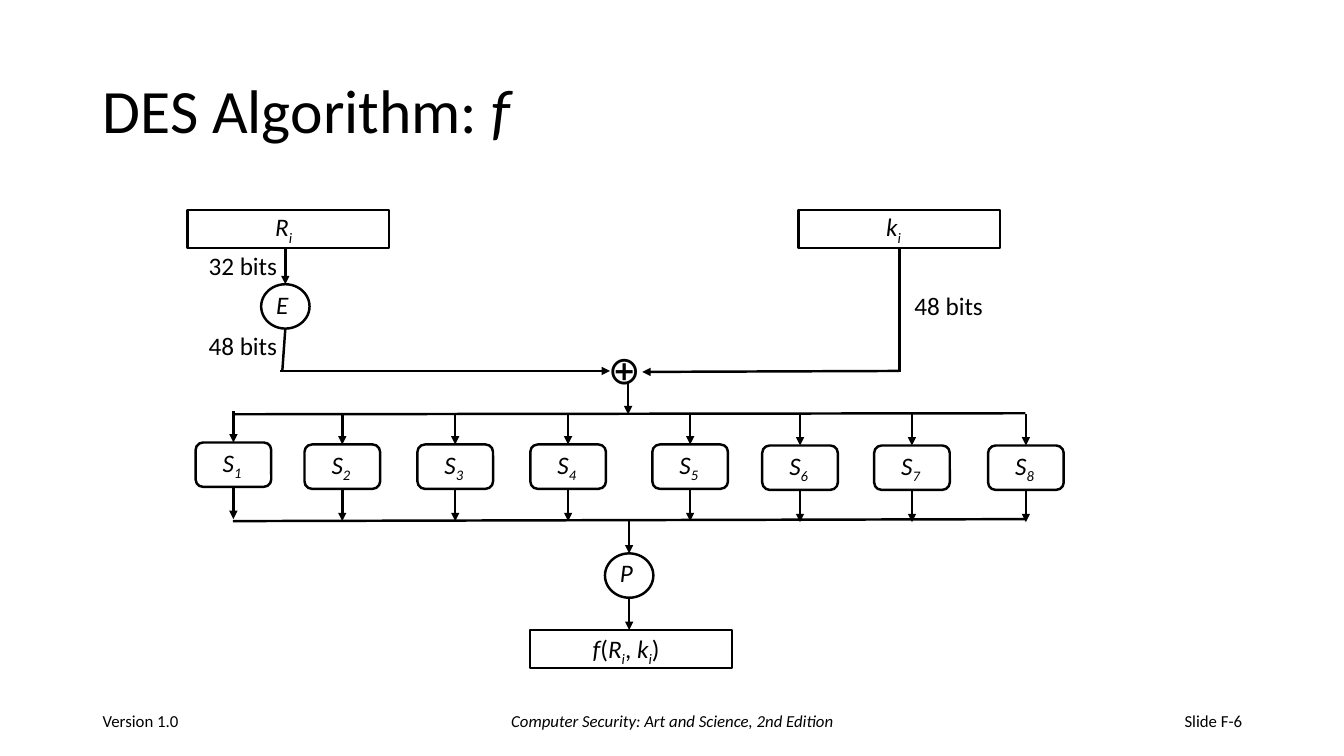
"""Build the slide showing the DES round function f."""
from lxml.etree import SubElement
from pptx import Presentation
from pptx.dml.color import RGBColor
from pptx.enum.shapes import MSO_CONNECTOR as CONNECTOR, MSO_SHAPE as SHAPE
from pptx.enum.text import MSO_ANCHOR as ANCHOR, MSO_AUTO_SIZE as AUTO, PP_ALIGN as ALIGN
from pptx.oxml.ns import qn
from pptx.util import Inches, Pt

COLORS = {"ink": "000000"}
INK = RGBColor.from_string(COLORS["ink"])
ITALIC, SUBSCRIPT = "italic", "subscript"

presentation = Presentation()
presentation.slide_width, presentation.slide_height = Inches(13.33), Inches(7.5)
slide = presentation.slides.add_slide(presentation.slide_layouts[6])


def add_text(runs, left, top, width, height=0.4, size=18, align=ALIGN.LEFT,
             anchor=ANCHOR.TOP, wrap=False, grow=True, spacing=None):
    """Add a text box; runs are (text, style) pairs, and subscripts are italic."""
    box = slide.shapes.add_textbox(Inches(left), Inches(top), Inches(width), Inches(height))
    frame = box.text_frame
    frame.word_wrap = wrap
    frame.auto_size = AUTO.SHAPE_TO_FIT_TEXT if grow else AUTO.NONE
    frame.vertical_anchor = anchor
    paragraph = frame.paragraphs[0]
    paragraph.alignment = align
    paragraph.line_spacing = spacing
    for text, style in runs:
        run = paragraph.add_run()
        run.text = text
        run.font.name, run.font.size = "Calibri", Pt(size)
        run.font.color.rgb = INK
        run.font.italic = style in (ITALIC, SUBSCRIPT)
        if style == SUBSCRIPT:
            run.font._element.set("baseline", "-25000")


def add_line(start, end, arrow=True, source=None, target=None):
    """Add a line; source leaves from its bottom side, target is met at its top."""
    line = slide.shapes.add_connector(CONNECTOR.STRAIGHT, *map(Inches, start + end))
    if source is not None:
        line.begin_connect(source, 2)
    if target is not None:
        line.end_connect(target, 0)
    line.line.color.rgb, line.line.width = INK, Pt(1.75)
    properties = line._element.spPr
    if arrow:
        SubElement(properties.find(qn("a:ln")), qn("a:tailEnd"), type="triangle")
    SubElement(properties, qn("a:effectLst"))


add_text([("DES Algorithm: ", None), ("f", ITALIC)], 0.92, 0.4, 11.5, 1.45, size=44,
         anchor=ANCHOR.MIDDLE, wrap=True, grow=False, spacing=0.9)
footers = [
    ("Version 1.0", None, 0.92, 3, ALIGN.LEFT),
    ("Computer Security: Art and Science, 2nd Edition", ITALIC, 4.42, 4.5, ALIGN.CENTER),
    ("Slide F-6", None, 9.42, 3, ALIGN.RIGHT),
]
for text, style, left, width, align in footers:
    add_text([(text, style)], left, 6.95, width, size=12, align=align,
             anchor=ANCHOR.MIDDLE, wrap=True, grow=False)

s_box_places = [(1.94, 4.39), (3.02, 4.41), (4.14, 4.41), (5.26, 4.41),
                (6.47, 4.41), (7.56, 4.42), (8.67, 4.42), (9.8, 4.42)]
outlines = {
    "R": (SHAPE.RECTANGLE, 1.86, 2.08, 2, 0.38, 1.5),
    "k": (SHAPE.RECTANGLE, 7.92, 2.08, 2, 0.38, 1.5),
    "E": (SHAPE.OVAL, 2.59, 2.82, 0.48, 0.44, 1.75),
    "P": (SHAPE.OVAL, 6, 5.49, 0.48, 0.44, 1.75),
    "f": (SHAPE.RECTANGLE, 5.26, 6.25, 2, 0.38, 1.5),
}
for number, (left, top) in enumerate(s_box_places, 1):
    outlines[f"S{number}"] = (SHAPE.ROUNDED_RECTANGLE, left, top, 0.75, 0.44, 1.75)

nodes = {}
for name, (kind, left, top, width, height, weight) in outlines.items():
    shape = slide.shapes.add_shape(kind, Inches(left), Inches(top), Inches(width), Inches(height))
    shape.shadow.inherit = False
    shape.fill.background()
    shape.line.color.rgb, shape.line.width = INK, Pt(weight)
    nodes[name] = shape

add_text([("R", ITALIC), ("i", SUBSCRIPT)], 2.63, 2.05, 0.38)
add_text([("k", ITALIC), ("i", SUBSCRIPT)], 8.69, 2.05, 0.35)
add_text([("E", ITALIC)], 2.64, 2.82, 0.32)
add_text([("P", ITALIC)], 6.05, 5.48, 0.33)
add_text([("⊕", None)], 5.93, 3.38, 0.59, 0.57, size=28)
add_text([("f", ITALIC), ("(", None), ("R", ITALIC), ("i", SUBSCRIPT), (", ", None),
          ("k", ITALIC), ("i", SUBSCRIPT), (")", None)], 5.78, 6.23, 0.9, wrap=True)
for bits, left, top in [("32 bits", 1.97, 2.43), ("48 bits", 1.97, 3.23), ("48 bits", 8.97, 2.83)]:
    add_text([(bits, None)], left, top, 0.89)

add_line((2.83, 2.46), (2.83, 2.82), target=nodes["E"])
add_line((2.83, 3.26), (2.8, 3.68), arrow=False, source=nodes["E"])
add_line((2.78, 3.68), (6.05, 3.68))
add_line((8.92, 2.46), (8.92, 3.69), arrow=False, source=nodes["k"])
add_line((8.92, 3.68), (6.37, 3.69))
add_line((6.23, 3.79), (6.23, 4.11))
add_line((2.31, 4.11), (10.17, 4.1), arrow=False)
add_line((2.31, 5.17), (10.17, 5.15), arrow=False)
add_line((6.24, 5.15), (6.24, 5.49), target=nodes["P"])
add_line((6.24, 5.93), (6.24, 6.25), source=nodes["P"])

for number, (left, top) in enumerate(s_box_places, 1):
    center, s_box = left + 0.375, nodes[f"S{number}"]
    add_text([("S", ITALIC), (str(number), SUBSCRIPT)], left + 0.17, top, 0.4)
    add_line((center, top - 0.31), (center, top), target=s_box)
    add_line((center, top + 0.44), (center, top + 0.76), source=s_box)

presentation.save("out.pptx")
